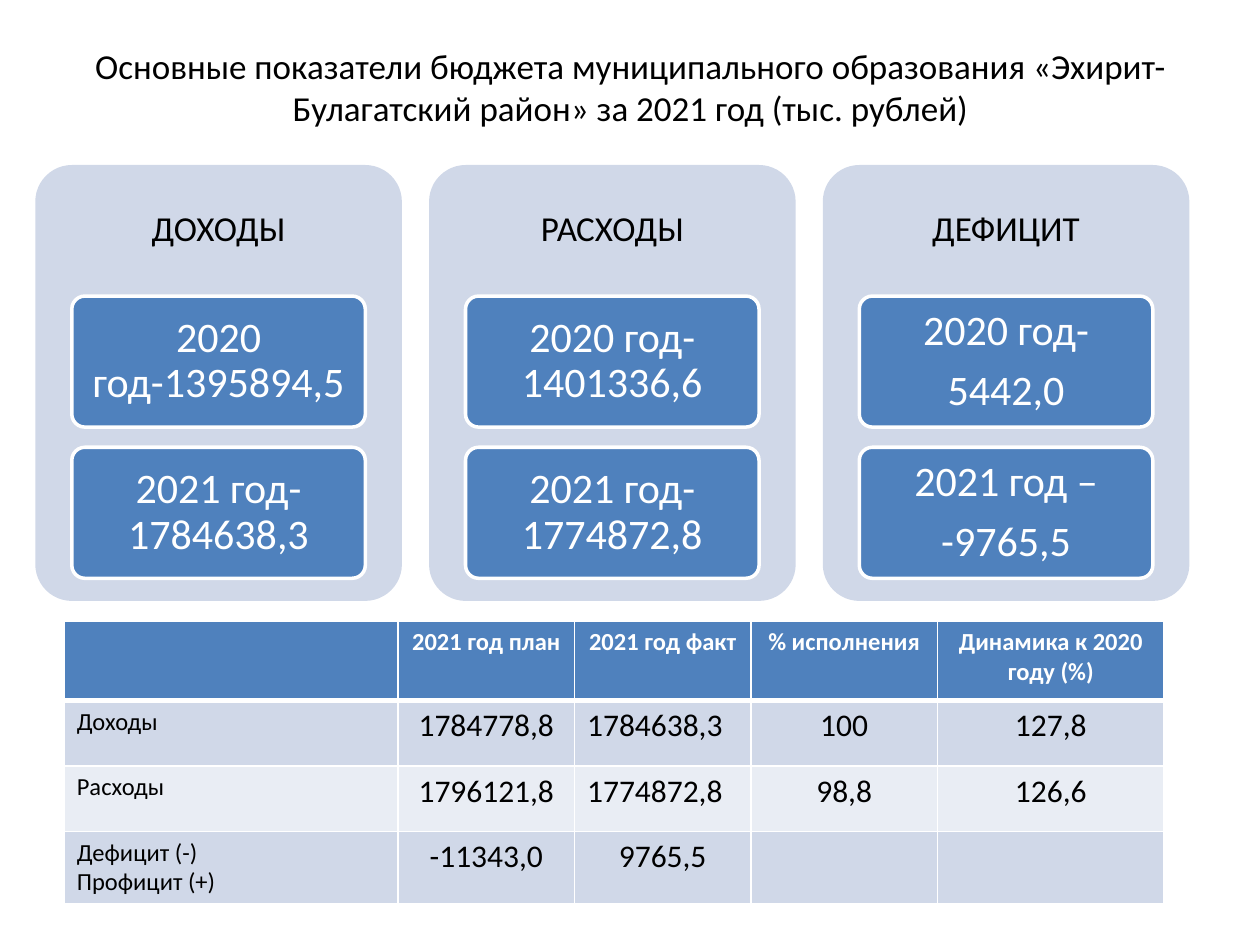
from lxml import etree
from pptx import Presentation
from pptx import util as u
from pptx.dml.color import RGBColor
from pptx.enum import shapes, text
from pptx.oxml.ns import qn

COLORS = {
    "black": "000000",
    "white": "FFFFFF",
    "blue": "4F81BD",
    "panel": "D0D8E8",
    "light": "E9EDF4",
}
TITLE = (
    "Основные показатели бюджета муниципального образования "
    "«Эхирит-Булагатский район» за 2021 год (тыс. рублей)"
)
INDICATORS = [
    ("ДОХОДЫ", ["2020 год-1395894,5", "2021 год- 1784638,3"]),
    ("РАСХОДЫ", ["2020 год- 1401336,6", "2021 год- 1774872,8"]),
    ("ДЕФИЦИТ", ["2020 год-\n5442,0", "2021 год –\n-9765,5"]),
]
TABLE_ROWS = [
    ["", "2021 год план", "2021 год факт", "% исполнения", "Динамика к 2020 году (%)"],
    ["Доходы", "1784778,8", "1784638,3", "100", "127,8"],
    ["Расходы", "1796121,8", "1774872,8", "98,8", "126,6"],
    ["Дефицит (-)\nПрофицит (+)", "-11343,0", "9765,5", "", ""],
]
COLUMN_WIDTHS = [2.65, 1.4, 1.4, 1.48, 1.8]
ROW_HEIGHTS = [0.63, 0.52, 0.52, 0.57]
LEFT_ALIGNED_NUMBERS = {(1, 2), (2, 2)}


def rgb(name):
    return RGBColor.from_string(COLORS[name])


def write_text(frame, content, size=18, color="black", bold=False, align="CENTER",
               line_spacing=None, space_after=None):
    frame.word_wrap = True
    for index, line in enumerate(content.split("\n")):
        paragraph = frame.paragraphs[0] if index == 0 else frame.add_paragraph()
        paragraph.alignment = getattr(text.PP_ALIGN, align)
        if line_spacing:
            paragraph.line_spacing = line_spacing
        if space_after:
            paragraph.space_after = u.Pt(space_after)
        run = paragraph.add_run()
        run.text = line
        run.font.name = "Calibri"
        run.font.size = u.Pt(size)
        run.font.bold = bold
        run.font.color.rgb = rgb(color)


def set_margins(frame, horizontal, vertical):
    frame.margin_left = frame.margin_right = u.Inches(horizontal)
    frame.margin_top = frame.margin_bottom = u.Inches(vertical)
    frame.vertical_anchor = text.MSO_ANCHOR.MIDDLE


def set_borders(cell, **widths):
    properties = cell._tc.get_or_add_tcPr()
    for position, side in enumerate(("lnL", "lnR", "lnT", "lnB")):
        line = etree.Element(qn("a:" + side), w=str(u.Pt(widths.get(side, 1))))
        fill = etree.SubElement(line, qn("a:solidFill"))
        etree.SubElement(fill, qn("a:srgbClr"), val=COLORS["white"])
        properties.insert(position, line)


class SlideBuilder:
    def __init__(self, presentation):
        self.slide = presentation.slides.add_slide(presentation.slide_layouts[5])

    def title(self, content, left, top, width, height):
        title = self.slide.shapes.title
        title.left, title.top = u.Inches(left), u.Inches(top)
        title.width, title.height = u.Inches(width), u.Inches(height)
        title.text_frame.vertical_anchor = text.MSO_ANCHOR.MIDDLE
        write_text(title.text_frame, content, size=20)

    def rounded(self, left, top, width, height, fill, line=None):
        shape = self.slide.shapes.add_shape(
            shapes.MSO_SHAPE.ROUNDED_RECTANGLE,
            u.Inches(left), u.Inches(top), u.Inches(width), u.Inches(height))
        shape.adjustments[0] = 0.1
        shape.shadow.inherit = False
        shape.fill.solid()
        shape.fill.fore_color.rgb = rgb(fill)
        if line:
            shape.line.color.rgb = rgb(line)
            shape.line.width = u.Pt(2)
        else:
            shape.line.fill.background()
        return shape

    def heading(self, content, left, top, width, height):
        box = self.slide.shapes.add_textbox(
            u.Inches(left), u.Inches(top), u.Inches(width), u.Inches(height))
        set_margins(box.text_frame, 0.08, 0.08)
        write_text(box.text_frame, content, size=20, line_spacing=0.9)

    def card(self, content, left, top, width, height):
        frame = self.rounded(left, top, width, height, "blue", "white").text_frame
        set_margins(frame, 0.07, 0.05)
        write_text(frame, content, size=24, color="white",
                   line_spacing=0.9, space_after=8.4)

    def panel(self, heading, cards, left, top):
        self.rounded(left, top, 2.91, 3.46, "panel")
        self.heading(heading, left, top, 2.91, 1.04)
        for index, content in enumerate(cards):
            self.card(content, left + 0.29, top + 1.04 + 1.2 * index, 2.33, 1.04)

    def table(self, rows, left, top):
        table = self.slide.shapes.add_table(
            len(rows), len(COLUMN_WIDTHS), u.Inches(left), u.Inches(top),
            u.Inches(sum(COLUMN_WIDTHS)), u.Inches(sum(ROW_HEIGHTS))).table
        for column, width in zip(table.columns, COLUMN_WIDTHS):
            column.width = u.Inches(width)
        for row, height in zip(table.rows, ROW_HEIGHTS):
            row.height = u.Inches(height)
        for row_index, row in enumerate(rows):
            for column_index, content in enumerate(row):
                self.cell(table.cell(row_index, column_index), content,
                          row_index, column_index)

    def cell(self, cell, content, row, column):
        header = row == 0
        fill = "blue" if header else "panel" if row % 2 else "light"
        cell.fill.solid()
        cell.fill.fore_color.rgb = rgb(fill)
        set_borders(cell, lnB=3 if header else 1, lnT=3 if row == 1 else 1)
        if content:
            left_aligned = column == 0 or (row, column) in LEFT_ALIGNED_NUMBERS
            write_text(cell.text_frame, content,
                       size=14 if header or column == 0 else 18,
                       color="white" if header else "black", bold=header,
                       align="LEFT" if left_aligned else "CENTER")


def main():
    presentation = Presentation()
    presentation.slide_width = u.Inches(10)
    presentation.slide_height = u.Inches(7.5)
    builder = SlideBuilder(presentation)
    builder.title(TITLE, 0.51, 0.3, 8.99, 0.77)
    for index, (heading, cards) in enumerate(INDICATORS):
        builder.panel(heading, cards, 0.28 + 3.125 * index, 1.31)
    builder.table(TABLE_ROWS, 0.51, 4.93)
    presentation.save("out.pptx")


if __name__ == "__main__":
    main()
